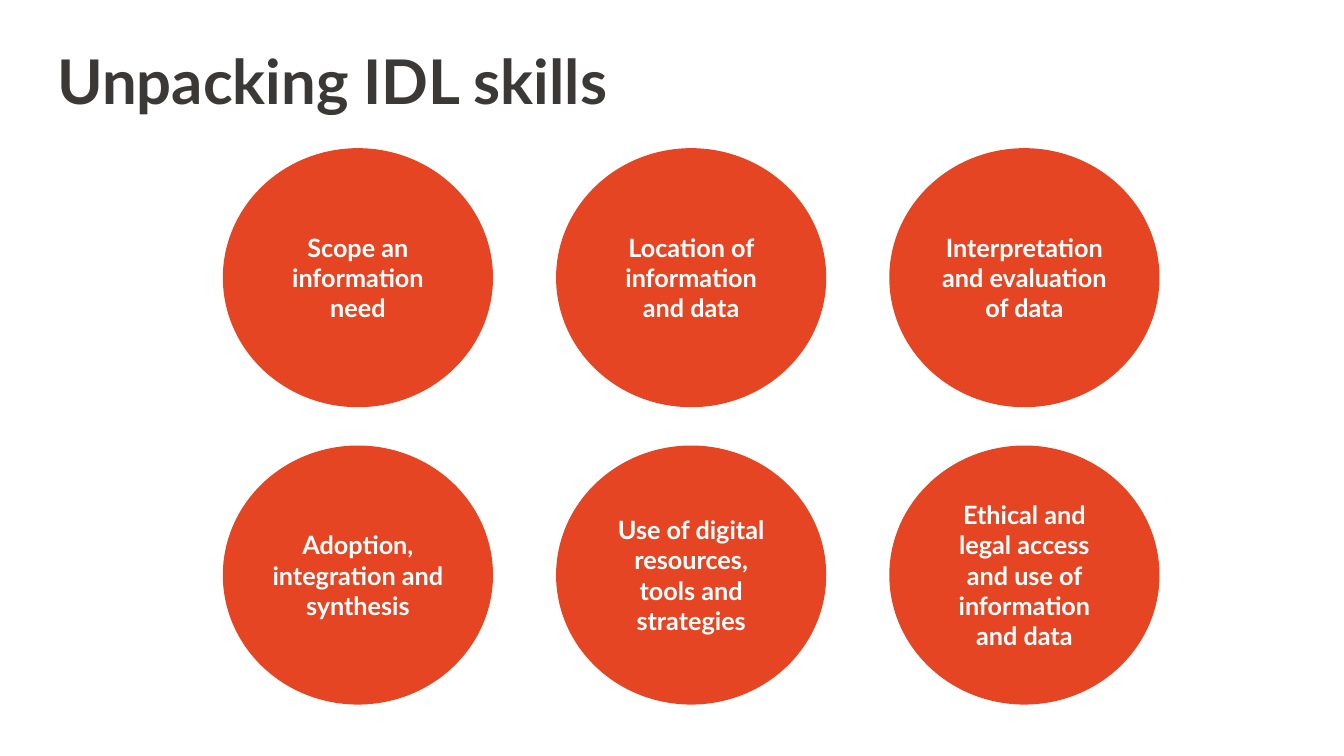
from pptx import Presentation
from pptx.dml.color import RGBColor
from pptx.enum.shapes import MSO_SHAPE
from pptx.enum.text import MSO_ANCHOR, PP_ALIGN
from pptx.util import Inches, Pt

SKILLS = [
    ["Scope an information need",
     "Location of information and data",
     "Interpretation and evaluation of data"],
    ["Adoption, integration and synthesis",
     "Use of digital resources, tools and strategies",
     "Ethical and legal access and use of information and data"],
]


def color(hex_string):
    return RGBColor.from_string(hex_string)


def write_text(shape, text, size, fill, align, line_spacing=1.0):
    frame = shape.text_frame
    frame.word_wrap = True
    frame.vertical_anchor = MSO_ANCHOR.MIDDLE
    para = frame.paragraphs[0]
    para.alignment = align
    para.line_spacing = line_spacing
    span = para.add_run()
    span.text = text
    span.font.name = SkillsPage.font
    span.font.size = Pt(size)
    span.font.bold = True
    span.font.color.rgb = color(fill)


class SkillsPage:
    font = "Lato"
    ink, accent, light = "3B3838", "E64524", "FFFFFF"
    grid_left, grid_top = 2.21, 1.47
    column_step, row_step = 3.305, 2.95
    circle_width, circle_height = 2.68, 2.57

    def __init__(self, deck):
        self.page = deck.slides.add_slide(deck.slide_layouts[5])

    def title(self, text):
        box = self.page.shapes.title
        box.left, box.top = Inches(0.47), Inches(0.11)
        box.width, box.height = Inches(11.5), Inches(1.45)
        write_text(box, text, size=44, fill=self.ink,
                   align=PP_ALIGN.LEFT, line_spacing=0.9)

    def circle(self, text, column, row):
        """Place a skill circle in the given column and row of the grid."""
        shape = self.page.shapes.add_shape(
            MSO_SHAPE.OVAL,
            Inches(self.grid_left + column * self.column_step),
            Inches(self.grid_top + row * self.row_step),
            Inches(self.circle_width), Inches(self.circle_height))
        shape.shadow.inherit = False
        shape.fill.solid()
        shape.fill.fore_color.rgb = color(self.accent)
        shape.line.fill.background()
        write_text(shape, text, size=18, fill=self.light, align=PP_ALIGN.CENTER)


def main():
    deck = Presentation()
    deck.slide_width, deck.slide_height = Inches(13.33), Inches(7.5)
    skills_page = SkillsPage(deck)
    skills_page.title("Unpacking IDL skills")
    for row, skills in enumerate(SKILLS):
        for column, skill in enumerate(skills):
            skills_page.circle(skill, column, row)
    deck.save("out.pptx")


if __name__ == "__main__":
    main()
